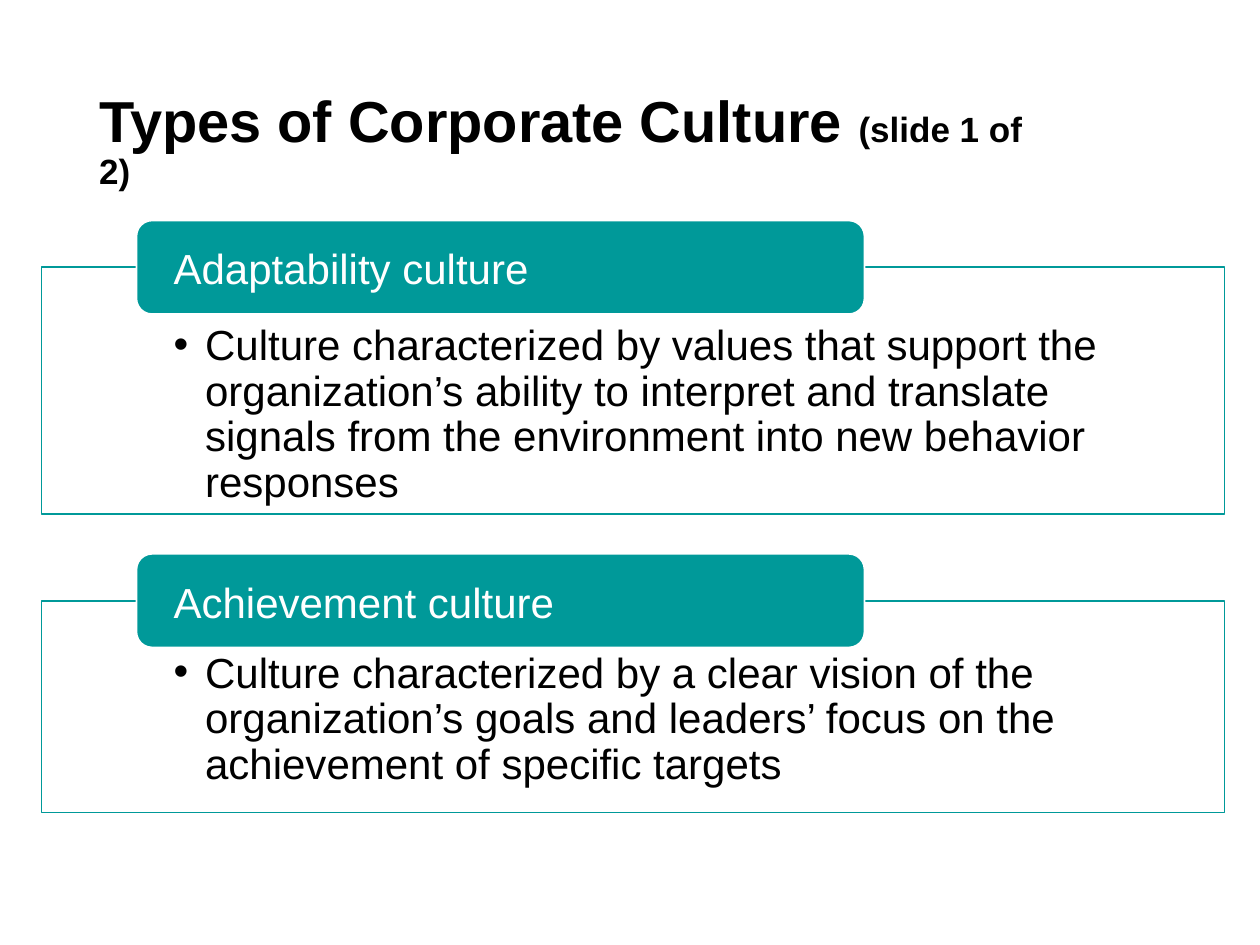
from lxml import etree
from pptx import Presentation
from pptx.dml.color import RGBColor
from pptx.enum import shapes, text
from pptx.oxml.ns import qn
from pptx.util import Pt

TEAL = RGBColor(0x00, 0x99, 0x99)
WHITE = RGBColor(0xFF, 0xFF, 0xFF)
BLACK = RGBColor(0x00, 0x00, 0x00)

TITLE_RUNS = [("Types of Corporate Culture ", 33), ("(slide 1 of 2)", 20)]
CULTURES = [
    {"name": "Adaptability culture",
     "definition": "Culture characterized by values that support the organization’s ability "
                   "to interpret and translate signals from the environment into new behavior responses",
     "bar_top": 126, "frame_height": 141, "gap_above_name": 0, "gap_below_name": 17.5},
    {"name": "Achievement culture",
     "definition": "Culture characterized by a clear vision of the organization’s goals "
                   "and leaders’ focus on the achievement of specific targets",
     "bar_top": 316.5, "frame_height": 121, "gap_above_name": 43, "gap_below_name": 14},
]
FRAME_LEFT, FRAME_WIDTH = 23.75, 676
BAR_LEFT, BAR_WIDTH, BAR_HEIGHT = 78, 416, 53.5
BULLET_INDENT = 18


def add_box(slide, kind, left, top, width, height, line_color, fill_color=None):
    shape = slide.shapes.add_shape(kind, Pt(left), Pt(top), Pt(width), Pt(height))
    shape.shadow.inherit = False
    if fill_color is None:
        shape.fill.background()
    else:
        shape.fill.solid()
        shape.fill.fore_color.rgb = fill_color
    shape.line.color.rgb = line_color
    shape.line.width = Pt(1)


def place(shape, left, top, width, height, anchor):
    shape.left, shape.top, shape.width, shape.height = Pt(left), Pt(top), Pt(width), Pt(height)
    frame = shape.text_frame
    frame.word_wrap = True
    frame.auto_size = text.MSO_AUTO_SIZE.NONE
    frame.vertical_anchor = anchor
    return frame


def style_font(font, size, color, bold=False):
    font.name, font.size, font.bold = "Arial", Pt(size), bold
    font.color.rgb = color


def add_body_paragraph(frame, index, content, color, space_before, bullet):
    paragraph = frame.paragraphs[0] if index == 0 else frame.add_paragraph()
    paragraph.text = content
    paragraph.level = 1 if bullet else 0
    paragraph.alignment = text.PP_ALIGN.LEFT
    paragraph.line_spacing = Pt(26)
    paragraph.space_before, paragraph.space_after = Pt(space_before), Pt(0)
    indent = Pt(BULLET_INDENT) if bullet else 0
    properties = paragraph._p.get_or_add_pPr()
    properties.set("marL", str(indent))
    properties.set("indent", str(-indent))
    if bullet:
        etree.SubElement(properties, qn("a:buFont"), typeface="Arial")
        etree.SubElement(properties, qn("a:buChar"), char="•")
    else:
        etree.SubElement(properties, qn("a:buNone"))
    style_font(paragraph.runs[0].font, 24, color)


def main():
    presentation = Presentation()
    presentation.slide_width, presentation.slide_height = Pt(720), Pt(540)
    slide = presentation.slides.add_slide(presentation.slide_layouts[1])
    title, body = slide.shapes.title, slide.placeholders[1]

    for culture in CULTURES:
        top = culture["bar_top"]
        add_box(slide, shapes.MSO_SHAPE.RECTANGLE, FRAME_LEFT, top + BAR_HEIGHT / 2,
                FRAME_WIDTH, culture["frame_height"], TEAL)
        add_box(slide, shapes.MSO_SHAPE.ROUNDED_RECTANGLE, BAR_LEFT, top,
                BAR_WIDTH, BAR_HEIGHT, WHITE, TEAL)

    for placeholder in (title, body):
        slide.shapes._spTree.append(placeholder._element)

    title_frame = place(title, 49.5, 29, 543.5, 104.5, text.MSO_ANCHOR.MIDDLE)
    paragraph = title_frame.paragraphs[0]
    paragraph.alignment = text.PP_ALIGN.LEFT
    paragraph.line_spacing = 0.9
    for content, size in TITLE_RUNS:
        run = paragraph.add_run()
        run.text = content
        style_font(run.font, size, BLACK, True)

    body_frame = place(body, 92, 138, 580, 330, text.MSO_ANCHOR.TOP)
    for index, culture in enumerate(CULTURES):
        add_body_paragraph(body_frame, 2 * index, culture["name"], WHITE,
                           culture["gap_above_name"], False)
        add_body_paragraph(body_frame, 2 * index + 1, culture["definition"], BLACK,
                           culture["gap_below_name"], True)

    presentation.save("out.pptx")


if __name__ == "__main__":
    main()
